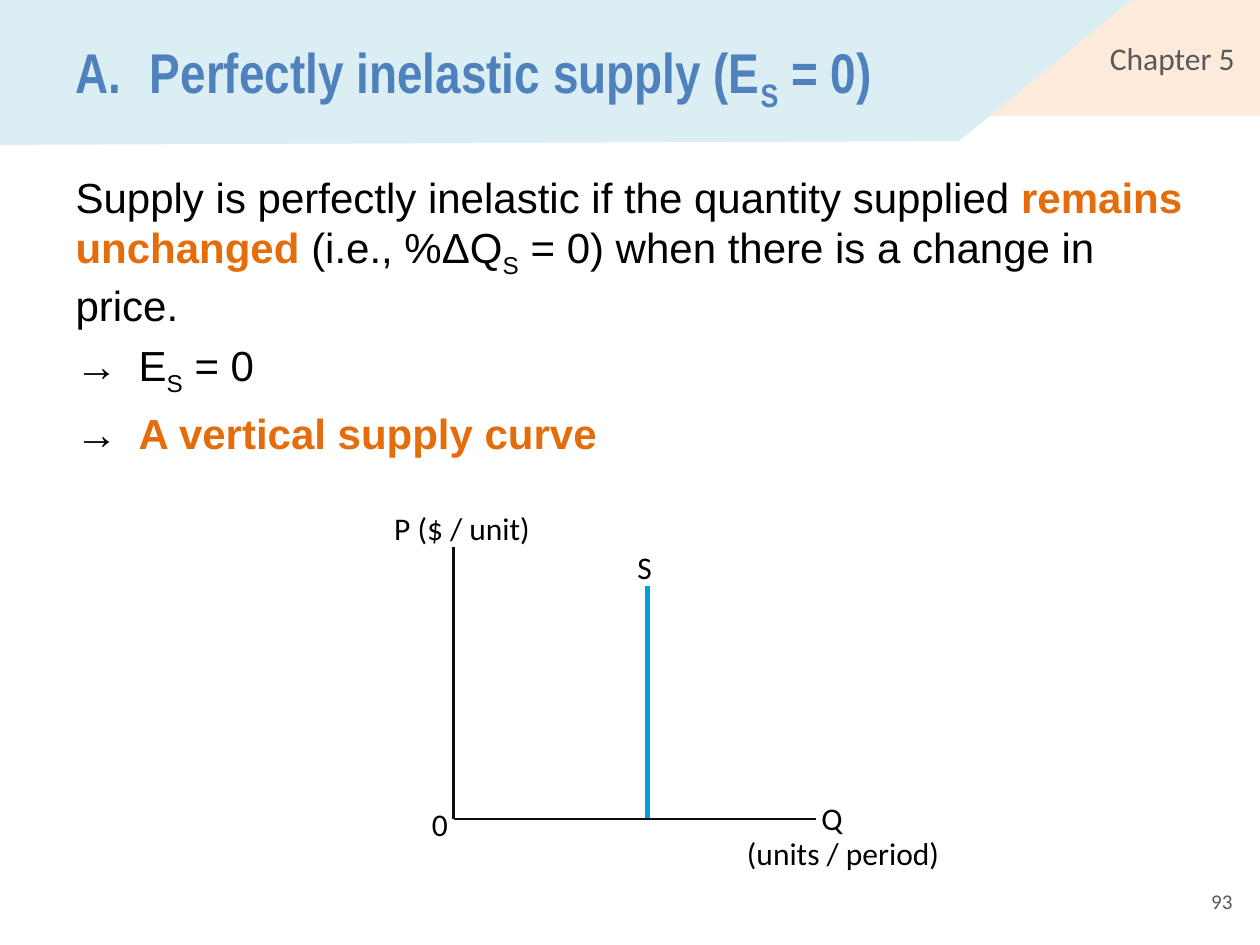
import pptx
import pptx.util
import pptx.dml.color
import pptx.enum.shapes
import pptx.enum.text
import pptx.oxml.ns
from lxml import etree

ALIGN = pptx.enum.text.PP_ALIGN
ANCHOR = pptx.enum.text.MSO_ANCHOR

# Theme
THEME = {
    "size": {"title": 32, "body": 24, "label": 18, "number": 12},
    "font": {"title": "Arial Narrow", "body": "Arial", "label": "Calibri"},
    "color": {"title": "4F81BD", "text": "000000", "accent": "E46C0A", "grey": "595959",
              "band": "DBEEF4", "corner": "FDEADA", "axis": "0D0D0D", "supply": "009FE3"},
}

# Content: each run is (text, style); lengths are cells of a 100 x 75 grid
COLUMNS, ROWS = 100, 75
TITLE = [("A.\tPerfectly inelastic supply (E", ""), ("S", "sub"), (" = 0)", "")]
BODY = [
    [("Supply is perfectly inelastic if the quantity supplied ", ""),
     ("remains unchanged ", "accent"), ("(i.e., %ΔQ", ""), ("S", "sub"),
     (" = 0) when there is a change in price.", "")],
    [("→\tE", ""), ("S", "sub"), (" = 0", "")],
    [("→\t", ""), ("A vertical supply curve", "accent")],
]
CHAPTER, PAGE_NUMBER = "Chapter 5", "93"
BAND = [(0, 0), (89.8, 0), (76.1, 11.2), (0, 11.5)]
ORIGIN = (36, 65)
GRAPH_LINES = [  # end points relative to the origin, colour, width
    ((0, -21.6), (0, 0), "axis", 1.5),
    ((0, 0), (28.8, 0), "axis", 1.5),
    ((15.4, -18.5), (15.4, -0.1), "supply", 3),
]
GRAPH_LABELS = [  # text, offset from the origin, width
    ("0", (-2.7, -1.6), 5.8),
    ("Q", (28.2, -2.1), 4.9),
    ("P ($ / unit)", (-5.7, -25.1), 13.9),
    ("S", (13.6, -22), 5.1),
    ("(units / period)", (22.3, 0.7), 20.8),
]

presentation = pptx.Presentation()
presentation.slide_width = pptx.util.Inches(10)
presentation.slide_height = pptx.util.Inches(7.5)
CELL_WIDTH = presentation.slide_width / COLUMNS
CELL_HEIGHT = presentation.slide_height / ROWS


def across(columns):
    return pptx.util.Emu(round(columns * CELL_WIDTH))


def down(rows):
    return pptx.util.Emu(round(rows * CELL_HEIGHT))


def box(left, top, width, height):
    return across(left), down(top), across(width), down(height)


def color(name):
    return pptx.dml.color.RGBColor.from_string(THEME["color"][name])


def fill_flat(shape, name):
    shape.fill.solid()
    shape.fill.fore_color.rgb = color(name)
    shape.line.fill.background()
    shape.shadow.inherit = False


def write_runs(paragraph, runs, size, font, color_name, bold=False):
    for text, style in runs:
        run = paragraph.add_run()
        run.text = text
        run.font.size = pptx.util.Pt(THEME["size"][size])
        run.font.name = THEME["font"][font]
        run.font.bold = bold or style == "accent"
        run.font.color.rgb = color("accent" if style == "accent" else color_name)
        if style == "sub":
            run.font._element.set("baseline", "-25000")


def set_indent(paragraph, hanging, tab):
    """Set a hanging indent and one left tab, without a bullet."""
    properties = paragraph._p.get_or_add_pPr()
    properties.set("marL", str(across(hanging)))
    properties.set("indent", str(-across(hanging)))
    etree.SubElement(properties, pptx.oxml.ns.qn("a:buNone"))
    tabs = etree.SubElement(properties, pptx.oxml.ns.qn("a:tabLst"))
    etree.SubElement(tabs, pptx.oxml.ns.qn("a:tab"), pos=str(across(tab)), algn="l")


def place(placeholder, area, anchor):
    placeholder.left, placeholder.top, placeholder.width, placeholder.height = box(*area)
    frame = placeholder.text_frame
    frame.auto_size = pptx.enum.text.MSO_AUTO_SIZE.NONE
    frame.vertical_anchor = anchor
    return frame


def add_label(shapes, text, area, size="label", color_name="text", align=ALIGN.LEFT):
    frame = shapes.add_textbox(*box(*area)).text_frame
    frame.word_wrap = True
    frame.paragraphs[0].alignment = align
    write_runs(frame.paragraphs[0], [(text, "")], size, "label", color_name)
    return frame


slide = presentation.slides.add_slide(presentation.slide_layouts[1])
title, body = slide.placeholders

# Header: corner tag and slanted band
corner = slide.shapes.add_shape(pptx.enum.shapes.MSO_SHAPE.RECTANGLE, *box(73.6, 0, 26.4, 9.2))
fill_flat(corner, "corner")
corner.text_frame.margin_right = across(2)
corner.text_frame.vertical_anchor = ANCHOR.MIDDLE
corner.text_frame.paragraphs[0].alignment = ALIGN.RIGHT
write_runs(corner.text_frame.paragraphs[0], [(CHAPTER, "")], "label", "label", "grey")

points = [(across(x), down(y)) for x, y in BAND]
builder = slide.shapes.build_freeform(*points[0])
builder.add_line_segments(points[1:], close=True)
fill_flat(builder.convert_to_shape(), "band")

# Page number
number = add_label(slide.shapes, PAGE_NUMBER, (75.5, 69.5, 23.3, 4), "number", "grey", ALIGN.RIGHT)
number.vertical_anchor = ANCHOR.MIDDLE

# Title and body, in front of the header
for placeholder in (body, title):
    slide.shapes._spTree.append(placeholder._element)
heading = place(title, (5, 2.1, 71, 7.9), ANCHOR.MIDDLE).paragraphs[0]
set_indent(heading, 5.9, 5.9)
heading.alignment = ALIGN.LEFT
write_runs(heading, TITLE, "title", "title", "title", bold=True)

frame = place(body, (5, 13.1, 90, 23.7), ANCHOR.TOP)
for index, runs in enumerate(BODY):
    paragraph = frame.add_paragraph() if index else frame.paragraphs[0]
    set_indent(paragraph, 0, 10)
    paragraph.space_before = pptx.util.Pt(5.8 if index else 0)
    write_runs(paragraph, runs, "body", "body", "text")

# Supply graph
graph = slide.shapes.add_group_shape().shapes
x0, y0 = ORIGIN
for (x1, y1), (x2, y2), name, width in GRAPH_LINES:
    line = graph.add_connector(pptx.enum.shapes.MSO_CONNECTOR.STRAIGHT,
                               across(x0 + x1), down(y0 + y1), across(x0 + x2), down(y0 + y2))
    line.line.color.rgb = color(name)
    line.line.width = pptx.util.Pt(width)
    etree.SubElement(line._element.spPr, pptx.oxml.ns.qn("a:effectLst"))
for text, (x, y), width in GRAPH_LABELS:
    add_label(graph, text, (x0 + x, y0 + y, width, 4))

presentation.save("out.pptx")
